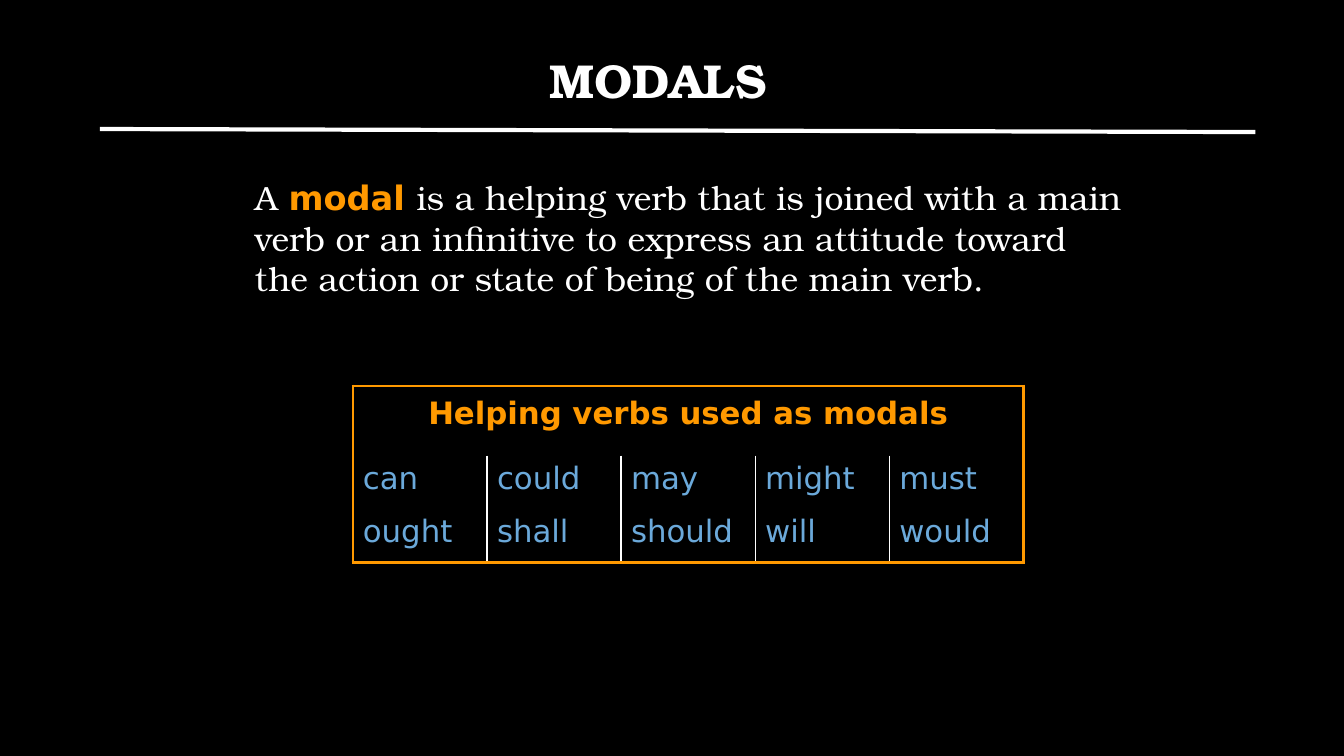
from lxml.etree import SubElement
from pptx import Presentation
from pptx.dml.color import RGBColor
from pptx.enum.shapes import MSO_CONNECTOR
from pptx.enum.text import MSO_ANCHOR, PP_ALIGN
from pptx.oxml.ns import qn
from pptx.util import Inches, Pt

# Content
TITLE = "MODALS"
DEFINITION = [
    ("A ", False),
    ("modal ", True),
    ("is a helping verb that is joined with a main verb or an infinitive to express "
     "an attitude toward the action or state of being of the main verb.", False),
]
TABLE_HEADING = "Helping verbs used as modals"
VERBS = [
    ["can", "could", "may", "might", "must"],
    ["ought", "shall", "should", "will", "would"],
]

# Style
SERIF, SANS = "TeX Gyre Bonum", "DejaVu Sans"
BLACK, WHITE, ORANGE, BLUE = "000000", "FFFFFF", "FF9900", "6BA9DA"
FRAME, DIVIDER = (ORANGE, 2.25), (WHITE, 1)
ROW_HEIGHTS = [0.69, 0.53, 0.53]
COLUMN_WIDTH = 1.33


def color(hex_value):
    return RGBColor.from_string(hex_value)


def style_font(font, name, hex_value, size, bold=False):
    font.name, font.size, font.bold = name, Pt(size), bold
    font.color.rgb = color(hex_value)


def add_text_box(left, top, width, height):
    box = slide.shapes.add_textbox(Inches(left), Inches(top), Inches(width), Inches(height))
    box.text_frame.word_wrap = True
    return box.text_frame


def set_border(cell, side, border):
    properties = cell._tc.get_or_add_tcPr()
    line = SubElement(properties, qn(f"a:ln{side}"))
    if border is None:
        SubElement(line, qn("a:noFill"))
        return
    hex_value, width = border
    line.set("w", str(Pt(width)))
    fill = SubElement(line, qn("a:solidFill"))
    SubElement(fill, qn("a:srgbClr")).set("val", hex_value)


presentation = Presentation()
presentation.slide_width, presentation.slide_height = Inches(13.33), Inches(7.5)
slide = presentation.slides.add_slide(presentation.slide_layouts[6])
slide.background.fill.solid()
slide.background.fill.fore_color.rgb = color(BLACK)

# Title
title_frame = add_text_box(0.87, 0.4, 11.32, 0.85)
title_frame.vertical_anchor = MSO_ANCHOR.MIDDLE
paragraph = title_frame.paragraphs[0]
paragraph.text = TITLE
paragraph.alignment = PP_ALIGN.CENTER
paragraph.line_spacing = 0.9
style_font(paragraph.font, SERIF, WHITE, 34, bold=True)

# Definition
paragraph = add_text_box(2.43, 1.71, 8.81, 1.31).paragraphs[0]
for text, is_term in DEFINITION:
    run = paragraph.add_run()
    run.text = text
    style_font(run.font, SANS if is_term else SERIF, ORANGE if is_term else WHITE, 24, is_term)

# Table of helping verbs
rows = [[TABLE_HEADING] + [""] * (len(VERBS[0]) - 1)] + VERBS
last_row, last_column = len(rows) - 1, len(rows[0]) - 1
table = slide.shapes.add_table(
    len(rows), len(rows[0]), Inches(3.5), Inches(3.83),
    Inches(COLUMN_WIDTH * len(rows[0])), Inches(sum(ROW_HEIGHTS))).table
table.first_row = table.horz_banding = False
for column in table.columns:
    column.width = Inches(COLUMN_WIDTH)
for row, height in zip(table.rows, ROW_HEIGHTS):
    row.height = Inches(height)

table.cell(0, 0).merge(table.cell(0, last_column))
table.cell(0, 0).margin_top = Inches(0.1)

for row_index, row in enumerate(rows):
    is_heading = row_index == 0
    for column_index, text in enumerate(row):
        cell = table.cell(row_index, column_index)
        set_border(cell, "L", FRAME if is_heading or column_index == 0 else DIVIDER)
        set_border(cell, "R", FRAME if is_heading or column_index == last_column else DIVIDER)
        set_border(cell, "T", FRAME if is_heading else None)
        set_border(cell, "B", FRAME if row_index == last_row else None)
        cell.fill.background()
        if text:
            paragraph = cell.text_frame.paragraphs[0]
            paragraph.text = text
            paragraph.alignment = PP_ALIGN.CENTER if is_heading else PP_ALIGN.LEFT
            style_font(paragraph.font, SANS, ORANGE if is_heading else BLUE, 22, is_heading)

# Rule under the title
rule = slide.shapes.add_connector(
    MSO_CONNECTOR.STRAIGHT, Inches(0.99), Inches(1.28), Inches(12.45), Inches(1.31))
rule.line.color.rgb = color(WHITE)
rule.line.width = Pt(3)
SubElement(rule._element.spPr, qn("a:effectLst"))

presentation.save("out.pptx")
